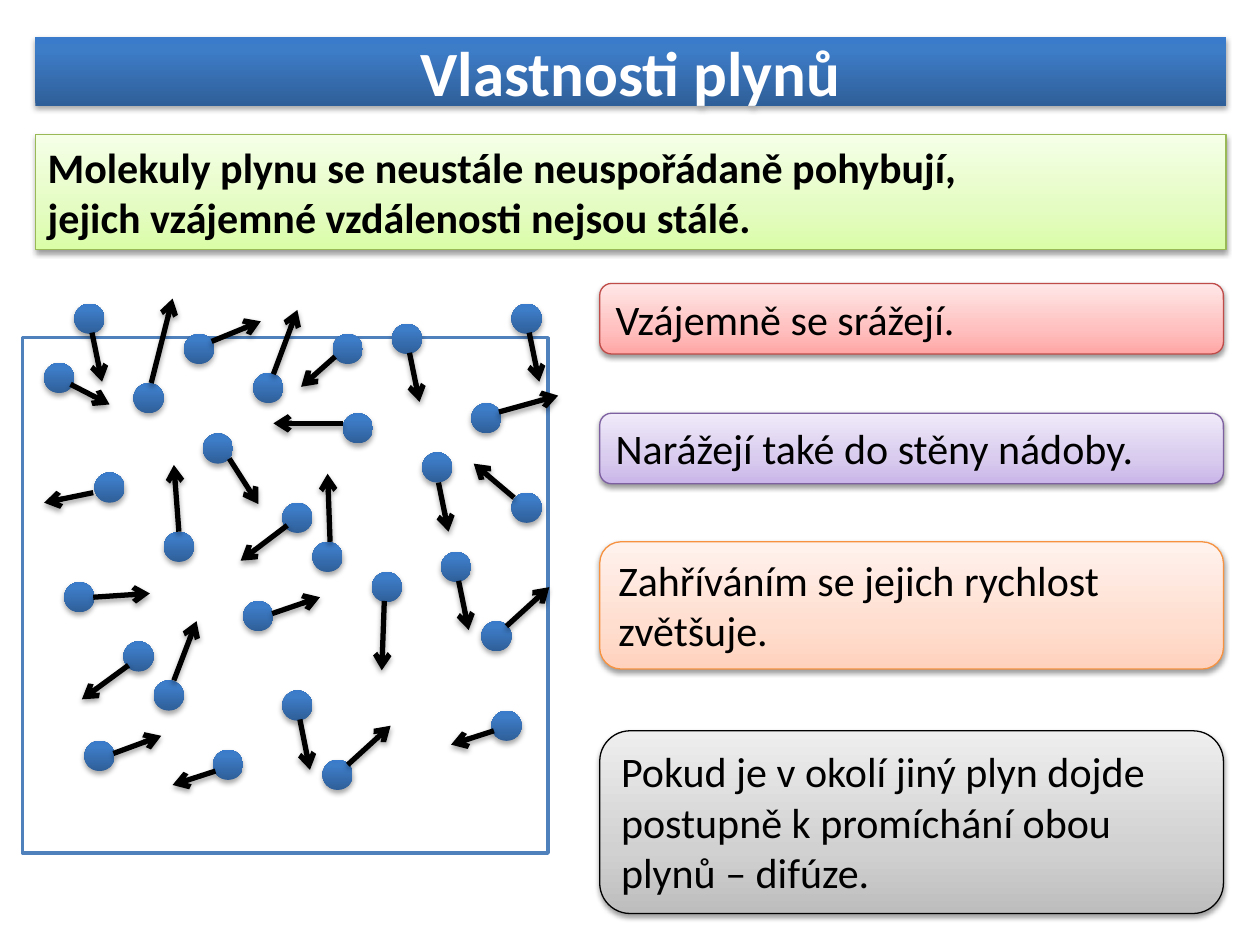
from lxml import etree
from pptx import Presentation
from pptx.dml.color import RGBColor
from pptx.enum import shapes, text
from pptx.oxml import parse_xml
from pptx.oxml.ns import qn
from pptx.util import Inches, Pt

NS = 'xmlns:a="http://schemas.openxmlformats.org/drawingml/2006/main"'
BLUE = [(0, "2F5F99"), (80, "3D7CC7"), (100, "3A7CCB")]
TITLE = "Vlastnosti plynů"
DEEP, SOFT = (35, 1.8), (38, 1.6)
BALL = 0.24

MOLECULES = [
    ((0.35, 2.88), (0.56, 3.05), (0.87, 3.21)),
    ((0.75, 3.75), (0.74, 3.91), (0.35, 3.99)),
    ((1.46, 2.65), (1.68, 2.71), (2.07, 2.55)),
    ((3.11, 2.57), (3.25, 2.8), (3.33, 3.19)),
    ((2.72, 3.28), (2.72, 3.36), (2.17, 3.36)),
    ((2.01, 2.96), (2.17, 2.97), (2.36, 2.46)),
    ((0.51, 4.62), (0.74, 4.74), (1.19, 4.71)),
    ((1.3, 4.22), (1.42, 4.22), (1.38, 3.69)),
    ((3.35, 3.59), (3.48, 3.83), (3.56, 4.22)),
    ((2.24, 3.99), (2.28, 4.17), (1.91, 4.45)),
    ((1.93, 4.77), (2.16, 4.87), (2.54, 4.74)),
    ((2.48, 4.3), (2.62, 4.3), (2.6, 3.76)),
    ((3.5, 4.38), (3.64, 4.61), (3.72, 5)),
    ((2.95, 4.54), (3.05, 4.77), (3.03, 5.32)),
    ((1.06, 3.04), (1.2, 3.04), (1.37, 2.37)),
    ((1.61, 3.44), (1.82, 3.64), (2.05, 4)),
    ((3.74, 3.2), (3.96, 3.27), (4.43, 3.14)),
    ((4.06, 3.91), (4.08, 3.95), (3.76, 3.68)),
    ((4.06, 2.41), (4.2, 2.64), (4.28, 3.03)),
    ((2.64, 2.65), (2.66, 2.83), (2.39, 3.07)),
    ((0.59, 2.41), (0.73, 2.64), (0.81, 3.03)),
    ((3.82, 4.93), (4.02, 4.97), (4.36, 4.66)),
    ((0.98, 5.09), (1.02, 5.28), (0.65, 5.55)),
    ((0.67, 5.88), (0.9, 5.98), (1.28, 5.84)),
    ((1.22, 5.4), (1.38, 5.4), (1.56, 4.93)),
    ((2.24, 5.48), (2.38, 5.71), (2.46, 6.11)),
    ((1.69, 5.95), (1.71, 6.12), (1.37, 6.23)),
    ((3.9, 5.64), (3.92, 5.8), (3.58, 5.91)),
    ((2.56, 6.03), (2.76, 6.07), (3.1, 5.76)),
]

PANELS = [
    ("Molekuly plynu se neustále neuspořádaně pohybují, \vjejich vzájemné vzdálenosti nejsou stálé.",
     (0.28, 1.07, 9.45, 0.91), "RECTANGLE", True, "98B955", ("DAFDA7", "E4FCC2", "F5FFE7")),
    ("Vzájemně se srážejí.",
     (4.76, 2.25, 4.95, 0.56), "ROUNDED_RECTANGLE", False, "BF4C48", ("FFA6A5", "FFC0BF", "FFE7E7")),
    ("Narážejí také do stěny nádoby.",
     (4.76, 3.28, 4.95, 0.56), "ROUNDED_RECTANGLE", False, "7D60A0", ("C9B5E8", "D8CBEE", "F0EAF9")),
    ("Zahříváním se jejich rychlost zvětšuje.",
     (4.76, 4.3, 4.95, 1.01), "ROUNDED_RECTANGLE", False, "F69240", ("FFD2BD", "FFDED0", "FFF2ED")),
    ("Pokud je v okolí jiný plyn dojde postupně k promíchání obou plynů – difúze.",
     (4.76, 5.8, 4.95, 1.45), "ROUNDED_RECTANGLE", False, "000000", ("BDBDBD", "D1D1D1", "EEEEEE")),
]


def tint(hue):
    return RGBColor.from_string(hue)


def place(shape, box):
    shape.left, shape.top, shape.width, shape.height = map(Inches, box)


def draw(kind, box):
    return slide.shapes.add_shape(getattr(shapes.MSO_SHAPE, kind), *map(Inches, box))


def edge(shape, hue, size):
    shape.line.color.rgb = tint(hue)
    shape.line.width = Pt(size)


def shade(shape, stops):
    shape.fill.solid()
    props = shape.element.spPr
    marks = "".join(f'<a:gs pos="{pos * 1000}"><a:srgbClr val="{hue}"/></a:gs>' for pos, hue in stops)
    props.replace(props.find(qn("a:solidFill")), parse_xml(
        f'<a:gradFill {NS} rotWithShape="1"><a:gsLst>{marks}</a:gsLst>'
        '<a:lin ang="16200000" scaled="0"/></a:gradFill>'))


def cast(shape, look):
    alpha, drop = look
    shape.element.spPr.append(parse_xml(
        f'<a:effectLst {NS}><a:outerShdw blurRad="{Pt(3.1)}" dist="{Pt(drop)}" dir="5400000" rotWithShape="0">'
        f'<a:srgbClr val="000000"><a:alpha val="{alpha * 1000}"/></a:srgbClr></a:outerShdw></a:effectLst>'))


def write(shape, words, size, hue, bold, align, anchor):
    frame = shape.text_frame
    frame.text = words
    frame.word_wrap = True
    frame.vertical_anchor = anchor
    for para in frame.paragraphs:
        para.alignment = align
        for run in para.runs:
            run.font.name = "Calibri"
            run.font.size = Pt(size)
            run.font.bold = bold
            run.font.color.rgb = tint(hue)


deck = Presentation()
deck.slide_width, deck.slide_height = Inches(10), Inches(7.5)
slide = deck.slides.add_slide(deck.slide_layouts[5])

title = slide.shapes.title
place(title, (0.28, 0.29, 9.45, 0.55))
shade(title, BLUE)
title.line.fill.background()
cast(title, DEEP)
write(title, TITLE, 36, "FFFFFF", True, text.PP_ALIGN.CENTER, text.MSO_ANCHOR.MIDDLE)
title.text_frame.auto_size = text.MSO_AUTO_SIZE.NONE

vessel = draw("RECTANGLE", (0.18, 2.68, 4.17, 4.09))
vessel.shadow.inherit = False
vessel.fill.solid()
vessel.fill.fore_color.rgb = tint("FFFFFF")
edge(vessel, "4F81BD", 2)

for spot, start, end in MOLECULES:
    ball = draw("OVAL", (*spot, BALL, BALL))
    shade(ball, BLUE)
    ball.line.fill.background()
    cast(ball, DEEP)
    arrow = slide.shapes.add_connector(shapes.MSO_CONNECTOR.STRAIGHT, *map(Inches, start + end))
    edge(arrow, "000000", 3)
    etree.SubElement(arrow.line._get_or_add_ln(), qn("a:tailEnd"), type="arrow")
    cast(arrow, DEEP)

for words, box, kind, bold, rim, hues in PANELS:
    panel = draw(kind, box)
    shade(panel, list(zip((0, 35, 100), hues)))
    edge(panel, rim, 0.75)
    cast(panel, SOFT)
    write(panel, words, 24, "000000", bold, text.PP_ALIGN.LEFT, text.MSO_ANCHOR.TOP)
    panel.text_frame.auto_size = text.MSO_AUTO_SIZE.SHAPE_TO_FIT_TEXT

deck.save("out.pptx")
